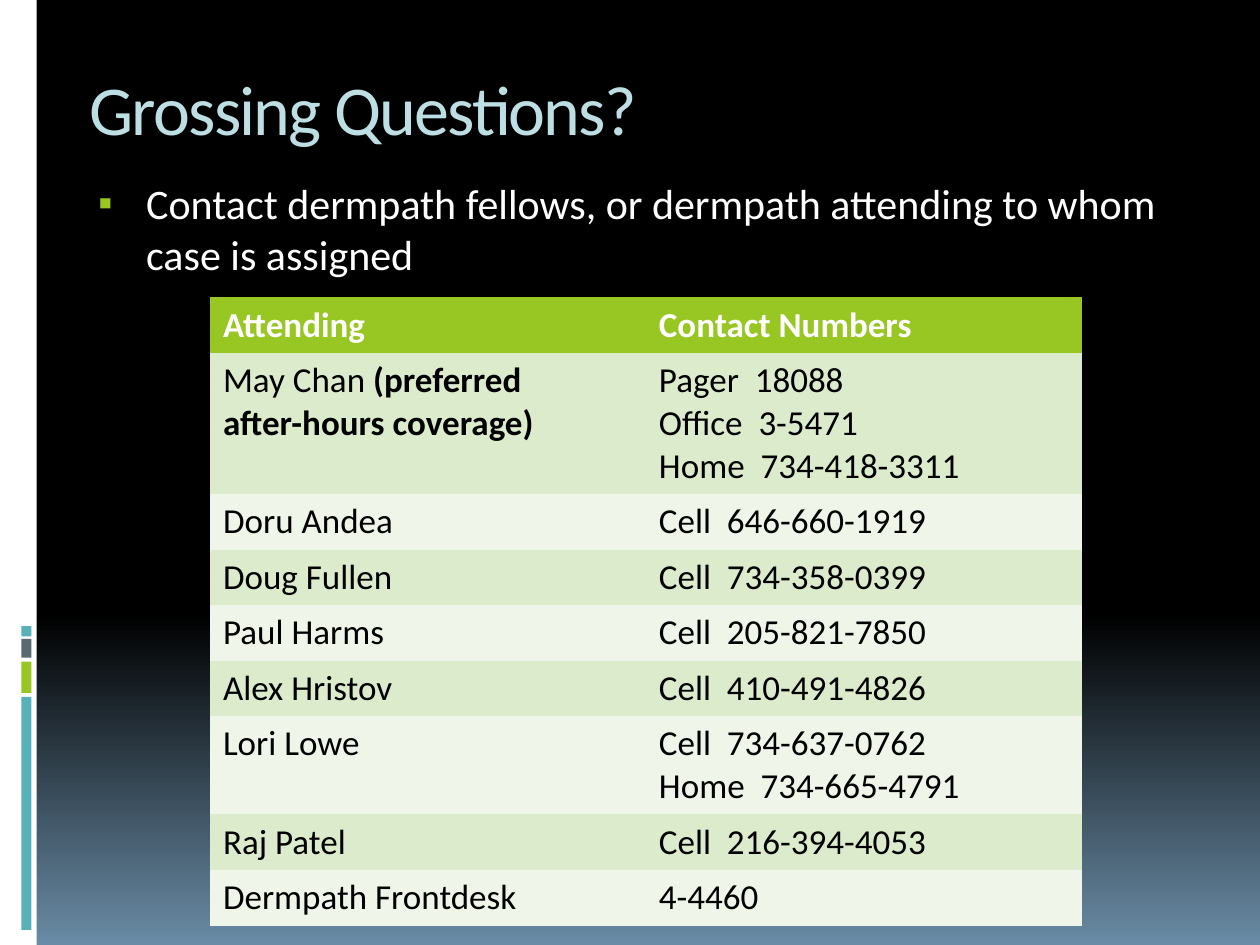
from lxml.etree import SubElement
from pptx import Presentation
from pptx.dml.color import RGBColor
from pptx.enum.shapes import MSO_SHAPE as Shape
from pptx.enum.text import MSO_ANCHOR as Anchor, MSO_AUTO_SIZE as AutoSize, PP_ALIGN as Align
from pptx.oxml.ns import qn
from pptx.util import Inches, Pt

FONT = "Calibri"
COLORS = {
    "black": "000000", "white": "FFFFFF", "steel": "698BA5", "title": "BDDFE3",
    "teal": "59B0B9", "green": "98C723", "slate": "5B6973",
    "band_dark": "DDEBCD", "band_light": "EFF5E8",
}
NO_GRID_STYLE = "{2D5ABB26-0587-4C30-8999-92F81FD0307C}"

CONTACTS = [
    ("Doru Andea", "Cell  646-660-1919"),
    ("Doug Fullen", "Cell  734-358-0399"),
    ("Paul Harms", "Cell  205-821-7850"),
    ("Alex Hristov", "Cell  410-491-4826"),
    ("Lori Lowe", "Cell  734-637-0762\nHome  734-665-4791"),
    ("Raj Patel", "Cell  216-394-4053"),
    ("Dermpath Frontdesk", "4-4460"),
]
PREFERRED = ("May Chan ", "Pager  18088\nOffice  3-5471\nHome  734-418-3311")
PREFERRED_NOTE = ("(preferred ", "after-hours coverage)")
HEADER = ("Attending", "Contact Numbers")


def color(name):
    return RGBColor.from_string(COLORS[name])


def style_font(font, size, color_name, bold=False):
    font.name = FONT
    font.size = Pt(size)
    font.bold = bold
    font.color.rgb = color(color_name)


def place(shape, box):
    shape.left, shape.top, shape.width, shape.height = (Inches(value) for value in box)


def add_background(slide):
    fill = slide.background.fill
    fill.gradient()
    fill.gradient_angle = 270
    for stop, (position, name) in zip(fill.gradient_stops, [(0.65, "black"), (1, "steel")]):
        stop.position = position
        stop.color.rgb = color(name)


def add_bar(slide, box, color_name):
    bar = slide.shapes.add_shape(Shape.RECTANGLE, *(Inches(value) for value in box))
    bar.shadow.inherit = False
    bar.fill.solid()
    bar.fill.fore_color.rgb = color(color_name)
    bar.line.fill.background()


def add_side_strip(slide, box):
    left, top, width, height = box
    add_bar(slide, box, "white")
    # Accent blocks, from bottom to top
    for offset, block_height, name in [(5.53, 1.85, "teal"), (5.25, 0.25, "green"),
                                       (5.07, 0.15, "slate"), (4.97, 0.08, "teal")]:
        add_bar(slide, (left + 0.17, top + offset, 0.08, block_height), name)


def fill_placeholder(placeholder, box, text):
    place(placeholder, box)
    frame = placeholder.text_frame
    frame.text = text
    frame.word_wrap = True
    frame.auto_size = AutoSize.NONE
    frame.vertical_anchor = Anchor.TOP
    paragraph = frame.paragraphs[0]
    paragraph.alignment = Align.LEFT
    paragraph.line_spacing = 1.0
    paragraph.space_before = Pt(0)
    return paragraph


def add_title(slide, box):
    paragraph = fill_placeholder(slide.shapes.title, box, "Grossing Questions?")
    run = paragraph.runs[0]
    style_font(run.font, 40, "title")
    run.font._element.set("spc", "-100")


def add_body(slide, box):
    paragraph = fill_placeholder(
        slide.placeholders[1], box,
        "Contact dermpath fellows, or dermpath attending to whom case is assigned")
    properties = paragraph._p.get_or_add_pPr()
    properties.set("marL", str(Inches(0.45)))
    properties.set("indent", str(Inches(-0.38)))
    bullet_color = SubElement(properties, qn("a:buClr"))
    SubElement(bullet_color, qn("a:srgbClr"), val=COLORS["green"])
    SubElement(properties, qn("a:buSzPct"), val="95000")
    SubElement(properties, qn("a:buFont"), typeface=FONT)
    SubElement(properties, qn("a:buChar"), char="▪")
    style_font(paragraph.runs[0].font, 24, "white")


def add_contact_table(slide, box):
    rows = [HEADER, PREFERRED, *CONTACTS]
    table = slide.shapes.add_table(
        len(rows), len(HEADER), *(Inches(value) for value in box)).table
    table._tbl.tblPr.find(qn("a:tableStyleId")).text = NO_GRID_STYLE
    for row_index, row in enumerate(rows):
        is_header = row_index == 0
        band = "green" if is_header else "band_dark" if row_index % 2 else "band_light"
        text_color = "white" if is_header else "black"
        for column_index, text in enumerate(row):
            cell = table.cell(row_index, column_index)
            cell.fill.solid()
            cell.fill.fore_color.rgb = color(band)
            cell.text_frame.text = text
            for paragraph in cell.text_frame.paragraphs:
                style_font(paragraph.runs[0].font, 20, text_color, bold=is_header)

    # Bold note after the preferred contact, on two lines
    paragraph = table.cell(1, 0).text_frame.paragraphs[0]
    for index, line in enumerate(PREFERRED_NOTE):
        if index:
            paragraph.add_line_break()
        run = paragraph.add_run()
        run.text = line
        style_font(run.font, 20, "black", bold=True)


def main():
    presentation = Presentation()
    presentation.slide_width = Inches(10)
    presentation.slide_height = Inches(7.5)
    slide = presentation.slides.add_slide(presentation.slide_layouts[1])
    add_background(slide)
    add_side_strip(slide, (0, 0, 0.29, 7.5))
    add_title(slide, (0.61, 0.47, 8.89, 1))
    add_body(slide, (0.61, 1.36, 8.88, 1.01))
    add_contact_table(slide, (1.67, 2.36, 6.92, 0.41 * 9))
    presentation.save("out.pptx")


if __name__ == "__main__":
    main()
